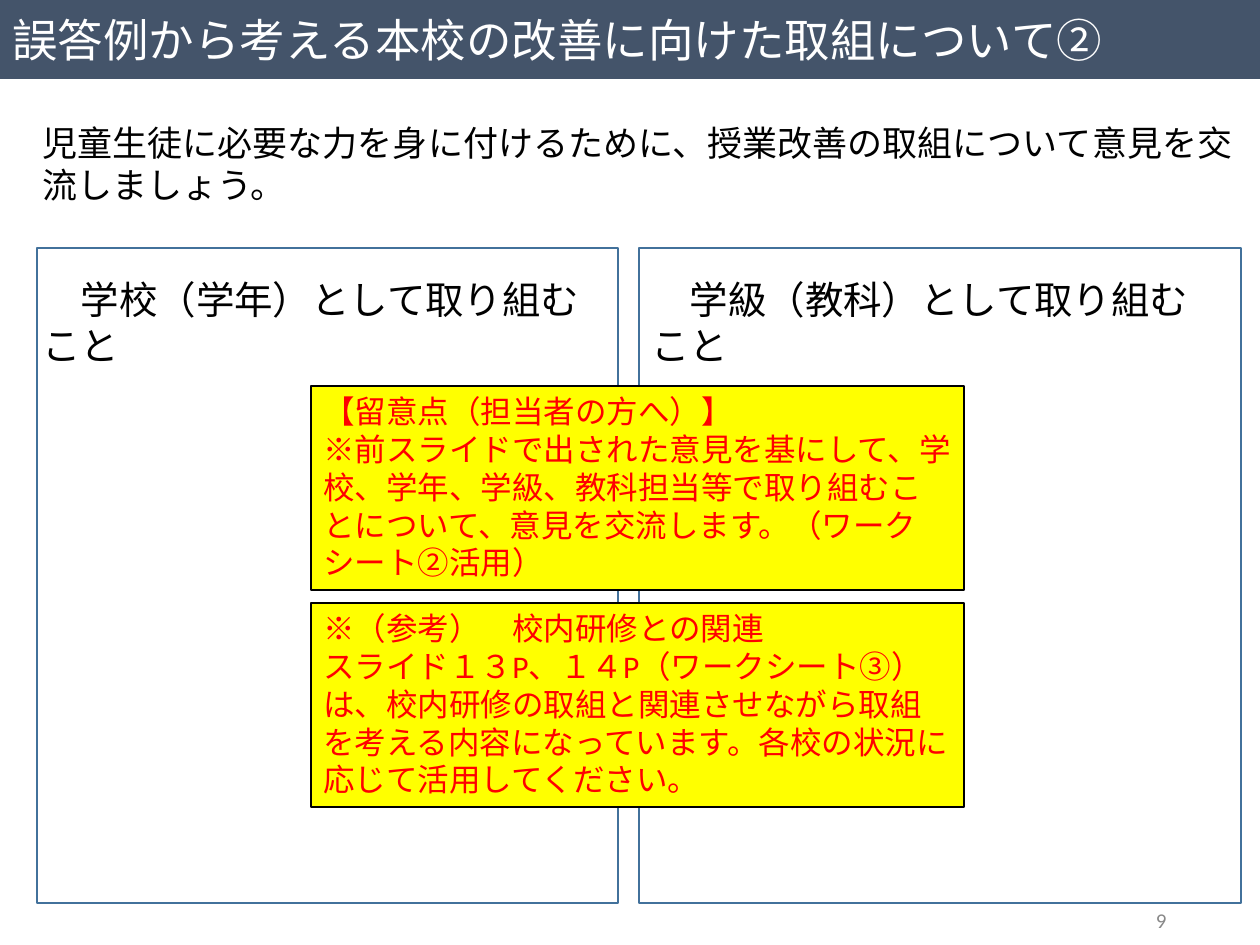
from pptx import Presentation
from pptx.dml.color import RGBColor
from pptx.enum.shapes import MSO_SHAPE
from pptx.enum.text import MSO_ANCHOR, PP_ALIGN
from pptx.util import Emu, Pt

SCALE = 914400 / 126  # EMU in one px
COLORS = {
    "navy": "44546A", "blue": "42719B", "yellow": "FFFF00",
    "red": "FF0000", "black": "000000", "white": "FFFFFF", "gray": "888888",
}


def px(n):
    return Emu(round(n * SCALE))


def color(name):
    return RGBColor.from_string(COLORS[name])


class Deck:
    def __init__(self, wide, high):
        self.prs = Presentation()
        self.prs.slide_width, self.prs.slide_height = px(wide), px(high)
        self.slide = self.prs.slides.add_slide(self.prs.slide_layouts[6])

    def label(self, shape, lines, size, ink, font="Arial",
              align=PP_ALIGN.LEFT, anchor=MSO_ANCHOR.TOP):
        frame = shape.text_frame
        frame.word_wrap = True
        frame.vertical_anchor = anchor
        for i, line in enumerate(lines):
            para = frame.add_paragraph() if i else frame.paragraphs[0]
            para.alignment = align
            run = para.add_run()
            run.text = line
            run.font.size = Pt(size)
            run.font.name = font
            run.font.color.rgb = color(ink)

    def text(self, box, line, size, ink="black", **style):
        shape = self.slide.shapes.add_textbox(*map(px, box))
        self.label(shape, [line], size, ink, **style)

    def rect(self, box, fill=None, line=None, width=1):
        shape = self.slide.shapes.add_shape(MSO_SHAPE.RECTANGLE, *map(px, box))
        shape.shadow.inherit = False
        if fill:
            shape.fill.solid()
            shape.fill.fore_color.rgb = color(fill)
        else:
            shape.fill.background()
        if line:
            shape.line.color.rgb = color(line)
            shape.line.width = Pt(width)
        else:
            shape.line.fill.background()
        return shape

    def note(self, top, lines):
        shape = self.rect((311, top, 653, 204), "yellow", "black", 0.75)
        self.label(shape, lines, 18, "red", font="Calibri")


def main():
    deck = Deck(1260, 945)

    # Title bar
    bar = deck.rect((0, 0, 1260, 79), "navy")
    deck.label(bar, ["誤答例から考える本校の改善に向けた取組について②"], 26, "white",
               anchor=MSO_ANCHOR.MIDDLE)

    # Prompt
    deck.text((30, 115, 1218, 97),
              "児童生徒に必要な力を身に付けるために、授業改善の取組について意見を交流しましょう。", 20)

    # Two panels with headings: frame left and width, heading left and width
    for left, wide, start, span, head in (
        (37, 581, 30, 562, "　学校（学年）として取り組むこと"),
        (639, 602, 639, 581, "　学級（教科）として取り組むこと"),
    ):
        deck.rect((left, 248, wide, 655), line="blue")
        deck.text((start, 270, span, 106), head, 22)

    # Notes for the leader
    deck.note(386, [
        "【留意点（担当者の方へ）】",
        "※前スライドで出された意見を基にして、学校、学年、学級、教科担当等で"
        "取り組むことについて、意見を交流します。（ワークシート②活用）",
    ])
    deck.note(603, [
        "※（参考）　校内研修との関連",
        "スライド１３P、１４P（ワークシート③）は、校内研修の取組と関連させながら"
        "取組を考える内容になっています。各校の状況に応じて活用してください。",
    ])

    # Page number
    deck.text((895, 895, 284, 50), "9", 12, "gray", font="Calibri",
              align=PP_ALIGN.RIGHT, anchor=MSO_ANCHOR.MIDDLE)

    deck.prs.save("out.pptx")


if __name__ == "__main__":
    main()
